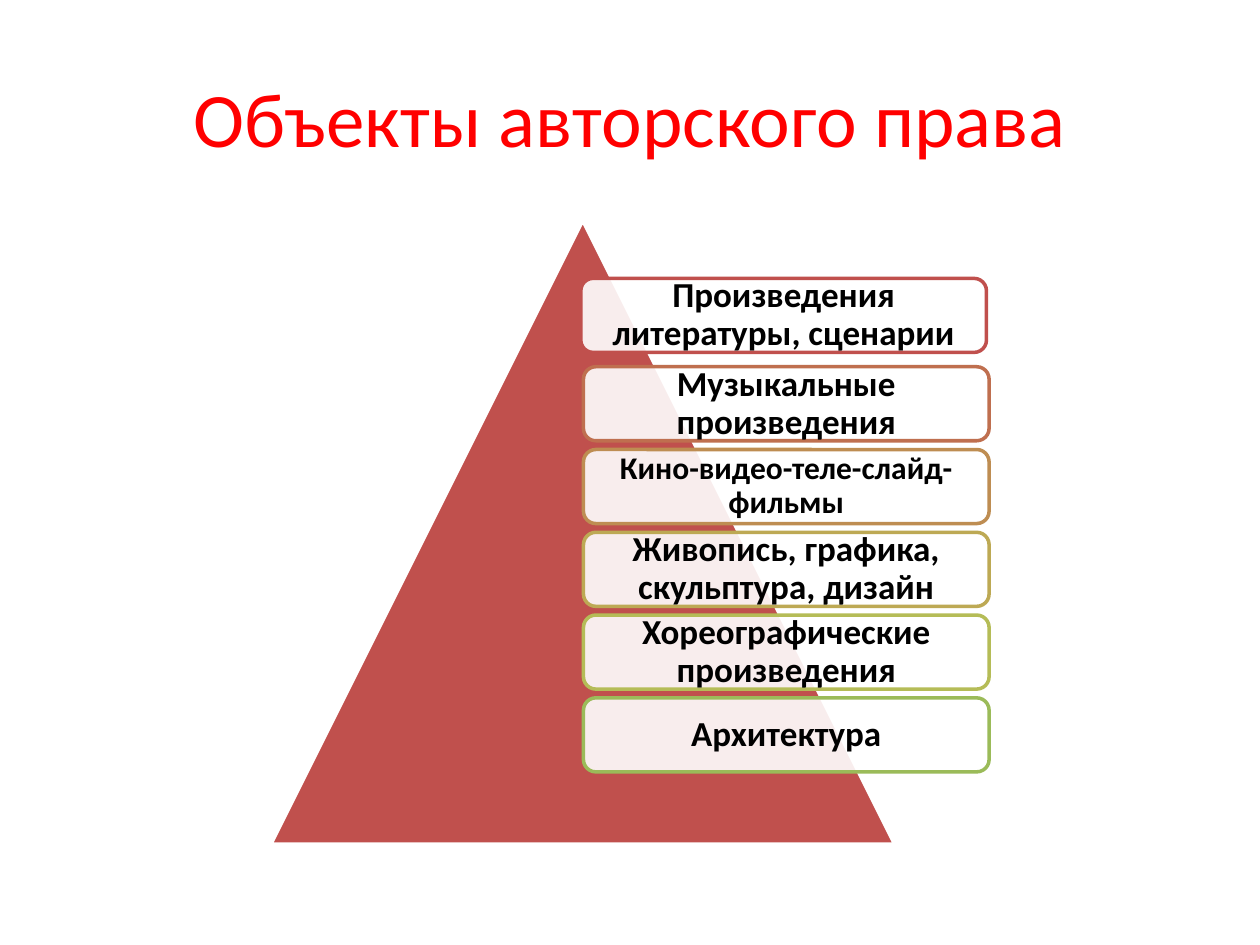
from lxml import etree
from pptx import Presentation
from pptx.dml.color import RGBColor
from pptx.enum.shapes import MSO_SHAPE as Preset
from pptx.enum.text import MSO_ANCHOR as Anchor, PP_ALIGN as Align
from pptx.oxml.ns import qn
from pptx.util import Pt


def add_text(paragraph, text, size, color, bold=False):
    paragraph.alignment = Align.CENTER
    run = paragraph.add_run()
    run.text = text
    run.font.name = "Calibri"
    run.font.size = Pt(size)
    run.font.bold = bold
    run.font.color.rgb = RGBColor.from_string(color)


def style_shape(shape, fill, line):
    shape.shadow.inherit = False
    shape.fill.solid()
    shape.fill.fore_color.rgb = RGBColor.from_string(fill)
    shape.line.color.rgb = RGBColor.from_string(line)
    shape.line.width = Pt(2)


presentation = Presentation()
presentation.slide_width, presentation.slide_height = Pt(720), Pt(540)
slide = presentation.slides.add_slide(presentation.slide_layouts[5])

title = slide.shapes.title
title.left, title.top, title.width, title.height = Pt(36), Pt(21.6), Pt(648), Pt(90)
title.text_frame.vertical_anchor = Anchor.MIDDLE
add_text(title.text_frame.paragraphs[0], "Объекты авторского права", 44, "FF0000")

pyramid = slide.shapes.add_shape(Preset.ISOSCELES_TRIANGLE, Pt(154.8), Pt(126), Pt(356.4), Pt(356.4))
style_shape(pyramid, "C0504D", "FFFFFF")

# The first box stands slightly apart; the others share one column and pitch.
column_left, column_top, pitch = 333.4, 209.6, 47.3
boxes = [
    ("Произведения литературы, сценарии", "C0504D", 20),
    ("Музыкальные произведения", "BF6F4F", 20),
    ("Кино-видео-теле-слайд-фильмы", "BE8D52", 18),
    ("Живопись, графика, скульптура, дизайн", "BDA954", 20),
    ("Хореографические произведения", "B5BC57", 20),
    ("Архитектура", "9BBB59", 20),
]
for index, (text, outline, size) in enumerate(boxes):
    left, top = (331.9, 159.1) if index == 0 else (column_left, column_top + pitch * (index - 1))
    box = slide.shapes.add_shape(Preset.ROUNDED_RECTANGLE, Pt(left), Pt(top), Pt(231.8), Pt(42.3))
    style_shape(box, "FFFFFF", outline)
    fill_color = box.fill._xPr.find(qn("a:solidFill"))[0]
    etree.SubElement(fill_color, qn("a:alpha")).set("val", "90000")

    frame = box.text_frame
    frame.word_wrap = True
    frame.vertical_anchor = Anchor.MIDDLE
    inset = Pt(size * 0.3)
    frame.margin_left = frame.margin_right = frame.margin_top = frame.margin_bottom = inset
    paragraph = frame.paragraphs[0]
    paragraph.line_spacing = 0.9
    add_text(paragraph, text, size, "000000", bold=True)

presentation.save("out.pptx")
